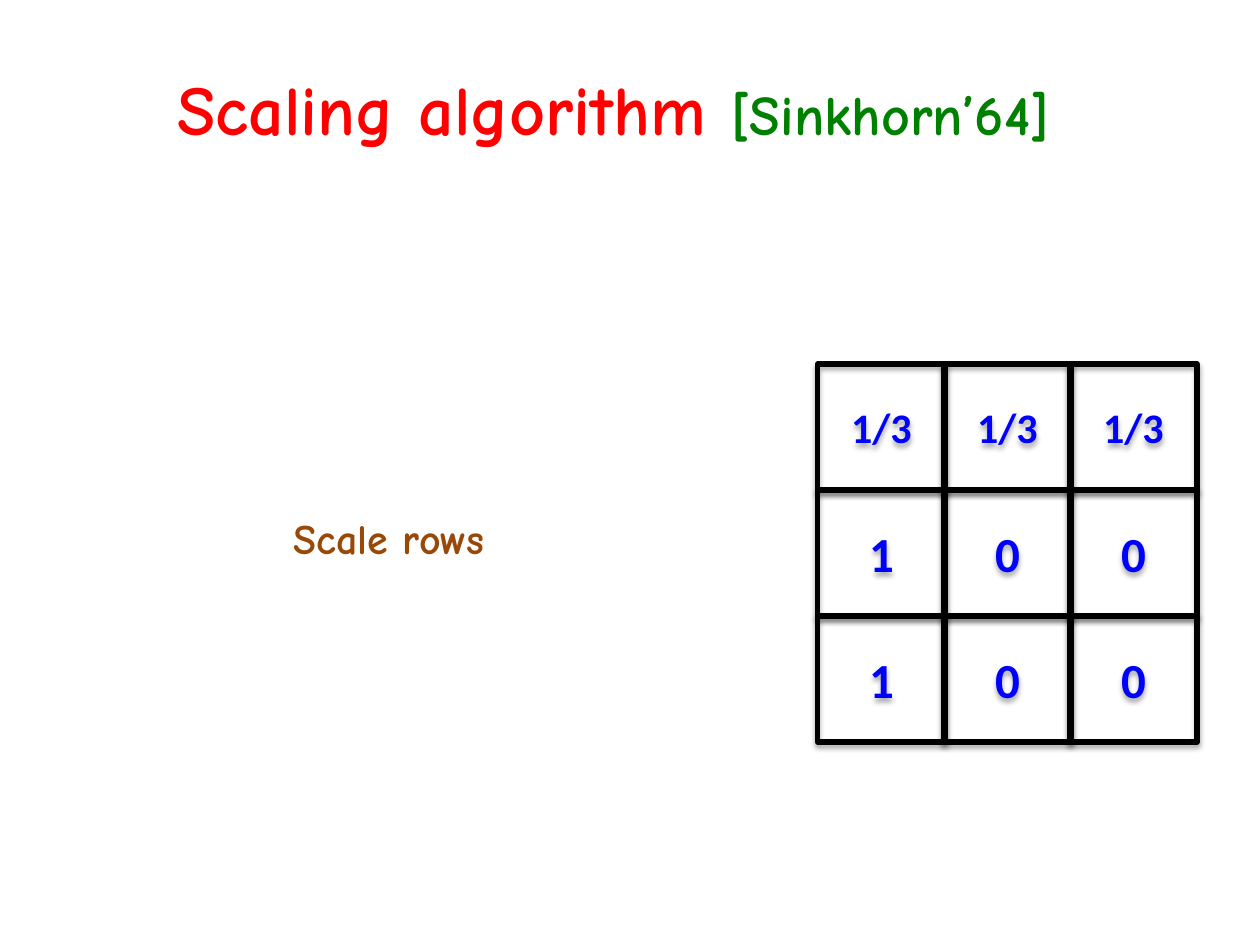
from pptx import Presentation
from pptx.dml.color import RGBColor
from pptx.enum.shapes import MSO_SHAPE
from pptx.enum.text import MSO_ANCHOR, MSO_AUTO_SIZE, PP_ALIGN
from pptx.util import Inches, Pt

RECTANGLE = MSO_SHAPE.RECTANGLE
MIDDLE = MSO_ANCHOR.MIDDLE
CENTER = PP_ALIGN.CENTER
NO_AUTOFIT = MSO_AUTO_SIZE.NONE
FIT_SHAPE = MSO_AUTO_SIZE.SHAPE_TO_FIT_TEXT

TITLE_ONLY = 5
HEADING_FONT = "Comic Neue"
CELL_FONT = "Calibri"
MATRIX = [("1/3", "1/3", "1/3"), ("1", "0", "0"), ("1", "0", "0")]
ROW_SIZES = [24, 28, 28]


def rgb(value):
    """Turn a hex string into a colour."""
    return RGBColor.from_string(value)


def format_run(r, font, size, color):
    """Set the bold font, size and colour of a run."""
    r.font.name = font
    r.font.size = Pt(size)
    r.font.bold = True
    r.font.color.rgb = rgb(color)


def set_title(s):
    """Place the title and fill it with its two coloured parts."""
    sp = s.shapes.title
    sp.left, sp.top = Inches(0.62), Inches(0.05)
    sp.width, sp.height = Inches(8.5), Inches(1.61)
    tf = sp.text_frame
    tf.vertical_anchor = MIDDLE
    tf.auto_size = NO_AUTOFIT
    p = tf.paragraphs[0]
    p.alignment = CENTER
    for text, size, color in [("Scaling algorithm ", 40, "FF0000"),
                              ("[Sinkhorn’64]", 32, "008000")]:
        r = p.add_run()
        r.text = text
        format_run(r, HEADING_FONT, size, color)


def add_cell(group, left, top, text, size):
    """Add one outlined matrix cell that keeps the theme shadow."""
    sp = group.shapes.add_shape(RECTANGLE, Inches(left), Inches(top),
                                Inches(1.01), Inches(1))
    sp.fill.background()
    sp.line.color.rgb = rgb("000000")
    sp.line.width = Pt(3)
    tf = sp.text_frame
    tf.text = text
    tf.vertical_anchor = MIDDLE
    p = tf.paragraphs[0]
    p.alignment = CENTER
    format_run(p.runs[0], CELL_FONT, size, "0000FF")


def add_matrix(s, left, top):
    """Add the grouped grid of cells, bottom row first."""
    group = s.shapes.add_group_shape()
    for row in reversed(range(len(MATRIX))):
        for col, text in enumerate(MATRIX[row]):
            add_cell(group, left + col, top + row, text, ROW_SIZES[row])


def add_label(s, left, top, width, height, text):
    """Add a one-line text label."""
    sp = s.shapes.add_textbox(Inches(left), Inches(top),
                              Inches(width), Inches(height))
    tf = sp.text_frame
    tf.text = text
    tf.word_wrap = False
    tf.auto_size = FIT_SHAPE
    format_run(tf.paragraphs[0].runs[0], HEADING_FONT, 24, "984807")


def main():
    """Build and save the slide."""
    prs = Presentation()
    prs.slide_width, prs.slide_height = Inches(10), Inches(7.5)
    s = prs.slides.add_slide(prs.slide_layouts[TITLE_ONLY])
    set_title(s)
    add_matrix(s, 6.49, 2.89)
    add_label(s, 2.23, 4.02, 1.95, 0.5, "Scale rows")
    prs.save("out.pptx")


if __name__ == "__main__":
    main()
